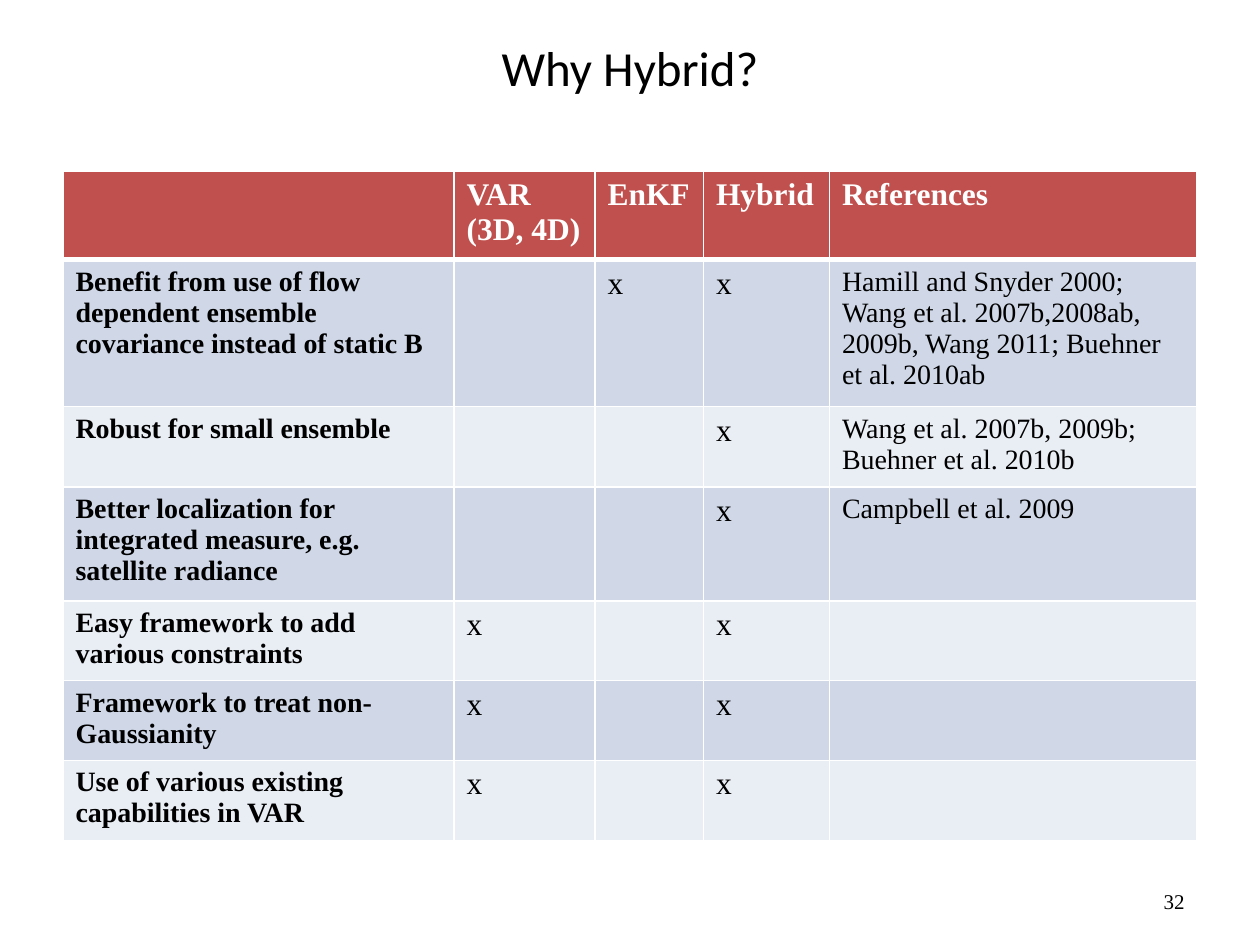
"""Build the slide that compares VAR, EnKF and hybrid data assimilation."""
from pptx import Presentation
from pptx.dml.color import RGBColor
from pptx.enum.text import MSO_ANCHOR, PP_ALIGN
from pptx.oxml import parse_xml
from pptx.oxml.ns import nsdecls
from pptx.util import Pt

MIDDLE = MSO_ANCHOR.MIDDLE
CENTER, LEFT, RIGHT = PP_ALIGN.CENTER, PP_ALIGN.LEFT, PP_ALIGN.RIGHT

COLORS = {
    "text": "000000",
    "light": "FFFFFF",
    "head": "C0504D",
    "odd": "D0D8E8",
    "even": "E9EDF4",
}
SERIF = "Times New Roman"
TITLE = {"name": "Calibri", "size": Pt(28)}
NUMBER = {"name": SERIF, "size": Pt(12)}
HEAD = {"name": SERIF, "size": Pt(18), "bold": True}
LABEL = {"name": SERIF, "size": Pt(16), "bold": True}
MARK = {"name": SERIF, "size": Pt(18), "bold": False}
CITE = {"name": SERIF, "size": Pt(16), "bold": False}

WIDTHS = [223.5, 80.5, 62, 72, 210]
HEIGHTS = [50, 84, 46, 65, 45.5, 45.5, 45.5]
ROWS = [
    ["", "VAR (3D, 4D)", "EnKF", "Hybrid", "References"],
    ["Benefit from use of flow dependent ensemble covariance instead of static B",
     "", "x", "x",
     "Hamill and Snyder 2000; Wang et al. 2007b,2008ab, 2009b, Wang 2011; "
     "Buehner et al. 2010ab"],
    ["Robust for small ensemble", "", "", "x",
     "Wang et al. 2007b, 2009b; Buehner et al. 2010b"],
    ["Better localization for integrated measure, e.g. satellite radiance",
     "", "", "x", "Campbell et al. 2009"],
    ["Easy framework to add various constraints", "x", "", "x", ""],
    ["Framework to treat non-Gaussianity", "x", "", "x", ""],
    ["Use of various existing capabilities in VAR", "x", "", "x", ""],
]


def write(frame, text, style, color="text", align=LEFT):
    """Put one styled run of text into a frame."""
    para = frame.paragraphs[0]
    para.alignment = align
    run = para.add_run()
    run.text = text
    for name, value in style.items():
        setattr(run.font, name, value)
    run.font.color.rgb = RGBColor.from_string(COLORS[color])


def add_text(slide, box, text, style, align):
    """Add a wrapped text box with its text in the middle."""
    frame = slide.shapes.add_textbox(*map(Pt, box)).text_frame
    frame.word_wrap = True
    frame.vertical_anchor = MIDDLE
    write(frame, text, style, align=align)


def add_edges(cell, row):
    """Draw light cell borders, with a thick rule below the header."""
    sides = {"L": 1, "R": 1, "T": 3 if row == 1 else 1, "B": 3 if row == 0 else 1}
    props = cell._tc.get_or_add_tcPr()
    for side, width in sides.items():
        props.append(parse_xml(
            f'<a:ln{side} {nsdecls("a")} w="{Pt(width)}"><a:solidFill>'
            f'<a:srgbClr val="{COLORS["light"]}"/></a:solidFill></a:ln{side}>'))


def fill_cell(cell, row, text, style):
    """Give a cell its borders, band colour and text."""
    add_edges(cell, row)
    band = "head" if row == 0 else "odd" if row % 2 else "even"
    cell.fill.solid()
    cell.fill.fore_color.rgb = RGBColor.from_string(COLORS[band])
    if text:
        write(cell.text_frame, text, style, "text" if row else "light")


def add_grid(slide, left, top):
    """Add the comparison table."""
    table = slide.shapes.add_table(
        len(ROWS), len(WIDTHS), Pt(left), Pt(top),
        Pt(sum(WIDTHS)), Pt(sum(HEIGHTS))).table
    for col, width in zip(table.columns, WIDTHS):
        col.width = Pt(width)
    for line, height in zip(table.rows, HEIGHTS):
        line.height = Pt(height)
    styles = [LABEL, MARK, MARK, MARK, CITE]
    for row, texts in enumerate(ROWS):
        for col, text in enumerate(texts):
            style = styles[col] if row else HEAD
            fill_cell(table.cell(row, col), row, text, style)


def main():
    """Build and save the slide."""
    deck = Presentation()
    deck.slide_width, deck.slide_height = Pt(720), Pt(540)
    slide = deck.slides.add_slide(deck.slide_layouts[6])
    add_text(slide, (516, 500.5, 168, 29), "32", NUMBER, RIGHT)
    add_text(slide, (36, 16, 648, 45), "Why Hybrid?", TITLE, CENTER)
    add_grid(slide, 36, 98)
    deck.save("out.pptx")


if __name__ == "__main__":
    main()
